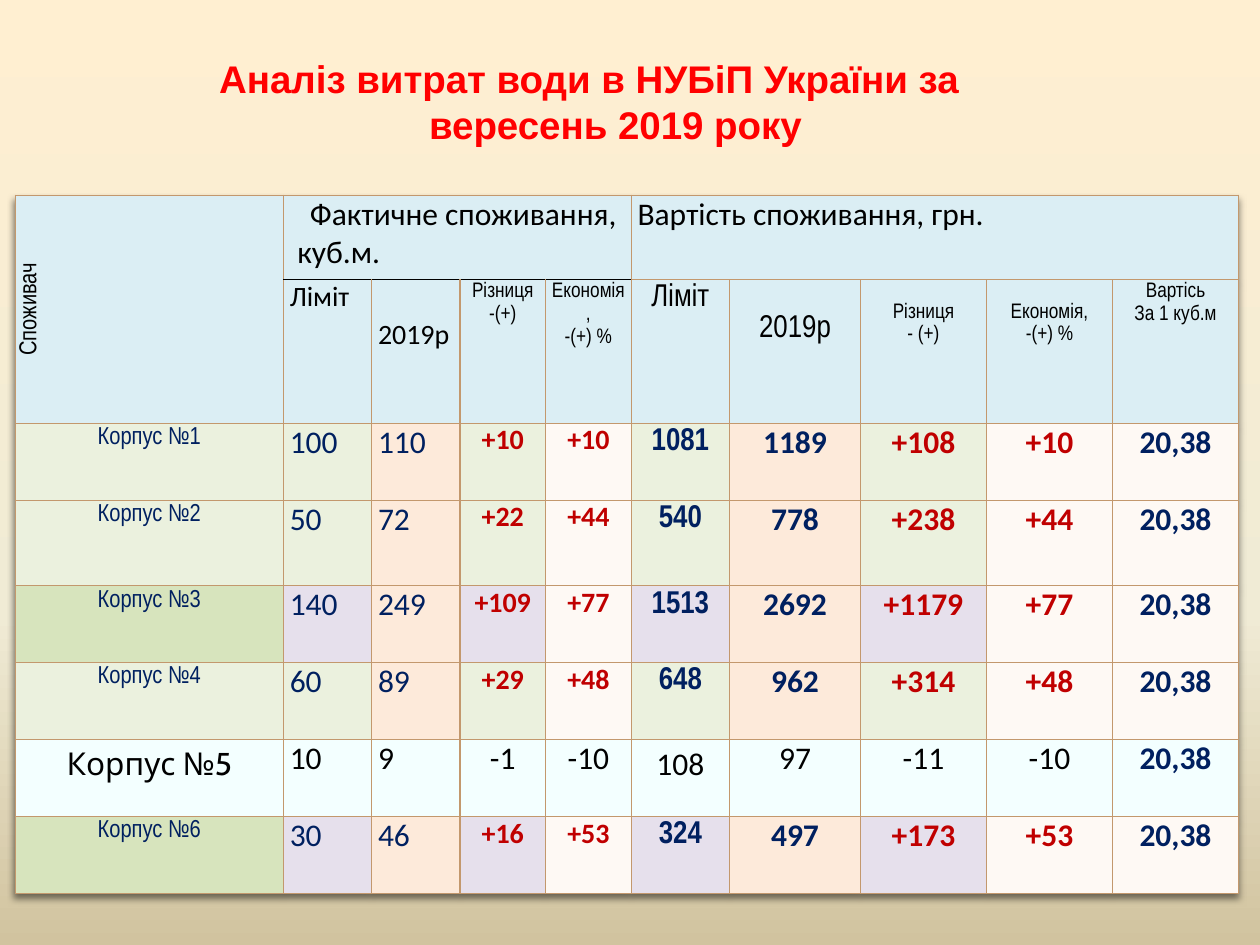
from copy import deepcopy

from lxml import etree
from pptx import Presentation
from pptx import util as u
from pptx.dml.color import RGBColor
from pptx.enum import text as tx
from pptx.oxml import parse_xml
from pptx.oxml.ns import nsdecls, qn

NARROW, CALIBRI, CABIN = "Arial Narrow", "Calibri", "Cabin"
BLACK, NAVY, RED, TAN = "000000", "002060", "C00000", "C3986D"
BLUE, CREAM, PEACH, MINT = "DBEEF4", "FEF9F4", "FDEADA", "F3FFFF"
GREEN, LIME, LILAC = "EBF1DE", "D7E4BD", "E6E0EC"

WIDTHS = [2.13, 0.7, 0.7, 0.68, 0.68, 0.78, 1.04, 1, 1, 1]
HEIGHTS = [0.67, 1.14, 0.61, 0.68] + [0.61] * 4

# Lines, size, font, centred, gap above
HEADS = [
    (["Ліміт"], 16, CALIBRI, False, 0),
    (["2019р"], 16, CALIBRI, False, 0.3),
    (["Різниця", "-(+)"], 12, NARROW, True, 0),
    (["Економія,", "-(+) %"], 12, NARROW, True, 0),
    (["Ліміт"], 18, NARROW, True, 0),
    (["2019р"], 18, NARROW, True, 0.24),
    (["Різниця", "- (+)"], 12, NARROW, True, 0.16),
    (["Економія,", "-(+) %"], 12, NARROW, True, 0.16),
    (["Вартісь", "За 1 куб.м"], 12, NARROW, True, 0),
]

DATA = [
    ["100", "110", "+10", "+10", "1081", "1189", "+108", "+10"],
    ["50", "72", "+22", "+44", "540", "778", "+238", "+44"],
    ["140", "249", "+109", "+77", "1513", "2692", "+1179", "+77"],
    ["60", "89", "+29", "+48", "648", "962", "+314", "+48"],
    ["10", "9", "-1", "-10", "108", "97", "-11", "-10"],
    ["30", "46", "+16", "+53", "324", "497", "+173", "+53"],
]
PRICE = "20,38"

# Size, font, colour, bold for each column of a data row
STYLES = ([(14, NARROW, NAVY, False)] + [(18, CALIBRI, NAVY, False)] * 2
          + [(16, CALIBRI, RED, True)] * 2
          + [(18, NARROW, NAVY, True), (18, CALIBRI, NAVY, True)]
          + [(18, CALIBRI, RED, True)] * 2 + [(18, CALIBRI, NAVY, True)])


def rgb(hex_):
    return RGBColor.from_string(hex_)


def add_run(para, words, size, face, color, bold=False):
    run = para.add_run()
    run.text = words
    font = run.font
    font.size, font.name, font.bold = u.Pt(size), face, bold
    font.color.rgb = rgb(color)


def indent(para, left, first, right=0):
    props = para._p.get_or_add_pPr()
    for key, size in (("marL", left), ("marR", right), ("indent", first)):
        props.set(key, str(u.Inches(size)))


def set_edge(cell, side, color=TAN, width=0.79):
    props = cell._tc.get_or_add_tcPr()
    line = etree.SubElement(props, qn("a:ln" + side), w=str(u.Pt(width)))
    fill = etree.SubElement(line, qn("a:solidFill"))
    etree.SubElement(fill, qn("a:srgbClr"), val=color)


def fill_cell(cell, lines, style, fill, center=True, space=1.0, gap=0):
    cell.fill.solid()
    cell.fill.fore_color.rgb = rgb(fill)
    cell.margin_left = cell.margin_right = u.Inches(0.05)
    cell.margin_top, cell.margin_bottom = u.Inches(gap), 0
    frame = cell.text_frame
    for i, words in enumerate(lines):
        para = frame.add_paragraph() if i else frame.paragraphs[0]
        para.alignment = tx.PP_ALIGN.CENTER if center else tx.PP_ALIGN.LEFT
        para.line_spacing = space
        add_run(para, words, *style)


def add_back(slide):
    fill = slide.background.fill
    fill.gradient()
    fill.gradient_angle = 270
    stops = slide._element.find(".//" + qn("a:gsLst"))
    stops.append(deepcopy(stops[-1]))
    shades = [(0, "FFEFD1"), (0.65, "F0EBD5"), (1, "D1C39F")]
    for stop, (place, color) in zip(fill.gradient_stops, shades):
        stop.position = place
        stop.color.rgb = rgb(color)


def add_title(slide):
    title = slide.shapes.title
    title.left, title.top = u.Inches(0.12), 0
    title.width, title.height = u.Inches(9.45), u.Inches(1.61)
    title.text_frame.vertical_anchor = tx.MSO_ANCHOR.MIDDLE
    para = title.text_frame.paragraphs[0]
    para.alignment = tx.PP_ALIGN.CENTER
    indent(para, 0.42, -0.42, 0.34)
    add_run(para, "Аналіз витрат води в НУБіП України за", 22, "Arial", "FF0000", True)
    para.add_line_break()
    add_run(para, "вересень 2019 року", 22, "Arial", "FF0000", True)


def add_grid(slide):
    frame = slide.shapes.add_table(
        len(HEIGHTS), len(WIDTHS), u.Inches(0.12), u.Inches(1.55),
        u.Inches(sum(WIDTHS)), u.Inches(sum(HEIGHTS)))
    table = frame.table
    table.first_row = table.horz_banding = False
    for col, width in zip(table.columns, WIDTHS):
        col.width = u.Inches(width)
    for row, height in zip(table.rows, HEIGHTS):
        row.height = u.Inches(height)

    # Borders, with a black rule under the consumption heading
    for r in range(len(HEIGHTS)):
        for c in range(len(WIDTHS)):
            for side in "LRTB":
                ruled = 1 <= c <= 4 and (r, side) in ((0, "B"), (1, "T"))
                set_edge(table.cell(r, c), side, *((BLACK, 1) if ruled else ()))

    # Soft shadow below the table
    table._tbl.tblPr.insert(0, parse_xml(
        f'<a:effectLst {nsdecls("a")}><a:outerShdw blurRad="50800" dist="38100" '
        'dir="5400000"><a:srgbClr val="000000"><a:alpha val="50000"/>'
        '</a:srgbClr></a:outerShdw></a:effectLst>'))
    return table


def add_heads(table):
    for first, last in (((0, 0), (1, 0)), ((0, 1), (0, 4)), ((0, 5), (0, 9))):
        table.cell(*first).merge(table.cell(*last))
    user = table.cell(0, 0)
    fill_cell(user, ["Споживач"], (14, NARROW, BLACK), BLUE, space=1.15)
    user.vertical_anchor = tx.MSO_ANCHOR.MIDDLE
    user._tc.get_or_add_tcPr().set("vert", "vert270")

    groups = (1, "Фактичне споживання, куб.м."), (5, "Вартість споживання, грн.")
    for c, words in groups:
        fill_cell(table.cell(0, c), [words], (18, CALIBRI, BLACK), BLUE, False)
    indent(table.cell(0, 1).text_frame.paragraphs[0], 0.06, 0.1)

    for c, (lines, size, face, center, gap) in enumerate(HEADS, 1):
        fill_cell(table.cell(1, c), lines, (size, face, BLACK), BLUE, center,
                  1.15 if face == NARROW else 1.0, gap)


def add_data(table):
    for n, values in enumerate(DATA, 1):
        main, tint = (LIME, LILAC) if n in (3, 6) else (GREEN, GREEN)
        fills = [main, tint, PEACH, tint, CREAM, tint, PEACH, tint, CREAM, CREAM]
        for c, words in enumerate([f"Корпус №{n}", *values, PRICE]):
            style, fill = STYLES[c], fills[c]
            if n == 5:  # the one building that saved water
                fill = MINT
                if c < 9:
                    style = (18, CALIBRI if c else CABIN, BLACK)
            fill_cell(table.cell(n + 1, c), [words], style, fill,
                      c not in (1, 2), 1.15 if c in (0, 5) else 1.0)


def main():
    deck = Presentation()
    deck.slide_width, deck.slide_height = u.Inches(10), u.Inches(7.5)
    slide = deck.slides.add_slide(deck.slide_layouts[5])
    add_back(slide)
    add_title(slide)
    table = add_grid(slide)
    add_heads(table)
    add_data(table)
    deck.save("out.pptx")


if __name__ == "__main__":
    main()
